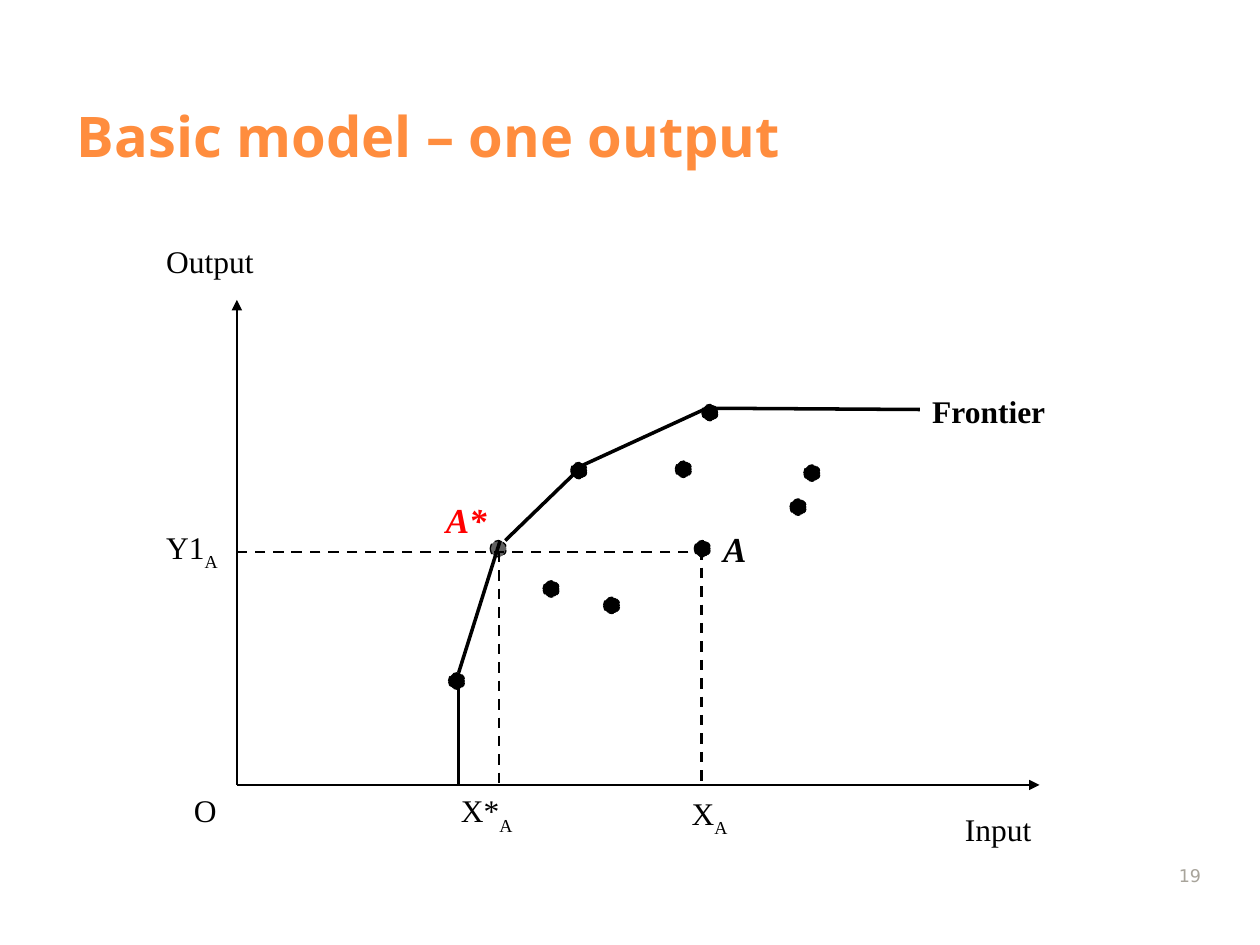
from lxml import etree
from pptx import Presentation
from pptx.dml.color import RGBColor
from pptx.enum.dml import MSO_LINE
from pptx.enum.shapes import MSO_CONNECTOR as CONN, MSO_SHAPE as SHAPE
from pptx.enum.text import MSO_ANCHOR as ANCHOR, PP_ALIGN as ALIGN
from pptx.oxml.ns import qn
from pptx.util import Inches, Pt

BLACK = "000000"
SERIF = "Times New Roman"
DOT = 0.13

# Axes
ORIGIN = (1.88, 6.23)
AXIS_ENDS = [(8.25, 6.23), (1.88, 2.38)]

# Frontier segments, left to right
FRONTIER = [
    ((3.64, 6.23), (3.64, 5.34)),
    ((3.64, 5.34), (3.97, 4.29)),
    ((4.01, 4.29), (4.63, 3.69)),
    ((4.63, 3.69), (5.61, 3.24)),
    ((5.61, 3.24), (7.3, 3.25)),
]

# Dashed guides from A and A* to the axes
GUIDES = [
    ((5.57, 4.36), (5.57, 6.23)),
    ((5.61, 4.38), (1.88, 4.38)),
    ((3.96, 4.38), (3.96, 6.25)),
]

# Top left corners of the observed units
UNITS = [(3.56, 5.34), (4.53, 3.67), (5.57, 3.21), (4.79, 4.74), (5.51, 4.29),
         (6.38, 3.69), (5.36, 3.66), (6.27, 3.96), (4.31, 4.61)]
TARGET = (3.89, 4.29)

# Plain labels: text, box, bold
LABELS = [
    ("Input", (7.56, 6.38, 1.02, 0.45), False),
    ("Output", (1.22, 1.87, 1.12, 0.52), False),
    ("O", (1.44, 6.23, 0.55, 0.45), False),
    ("Frontier", (7.3, 3.06, 1.18, 0.45), True),
]

# Labels with a subscript A: text, box
VALUE_LABELS = [
    ("Y1", (1.22, 4.14, 0.77, 0.6)),
    ("X", (5.39, 6.25, 0.82, 0.45)),
    ("X*", (3.56, 6.23, 0.87, 0.45)),
]

# Point labels: text, box, colour
POINT_LABELS = [
    ("A", (5.64, 4.14, 0.44, 0.45), BLACK),
    ("A*", (3.44, 3.91, 0.64, 0.45), "FF0000"),
]


def rgb(color):
    return RGBColor.from_string(color)


def inches(values):
    return [Inches(v) for v in values]


def style_run(r, size, color=BLACK, font=SERIF, bold=False, italic=False):
    f = r.font
    f.name, f.size, f.bold, f.italic = font, Pt(size), bold, italic
    f.color.rgb = rgb(color)


def add_label(s, text, box, size=18, subscript="", **style):
    tf = s.shapes.add_textbox(*inches(box)).text_frame
    tf.word_wrap = True
    p = tf.paragraphs[0]
    p.text = text
    if subscript:
        r = p.add_run()
        r.text = subscript
        r.font._element.set("baseline", "-30000")
    for r in p.runs:
        style_run(r, size, **style)
    return tf


def add_line(s, start, end, width, dashed=False, arrow=False):
    cx = s.shapes.add_connector(CONN.STRAIGHT, *inches(start + end))
    cx.line.color.rgb = rgb(BLACK)
    cx.line.width = Pt(width)
    if dashed:
        cx.line.dash_style = MSO_LINE.DASH
    if arrow:
        ln = cx.line._get_or_add_ln()
        etree.SubElement(ln, qn("a:tailEnd"), type="triangle")
    etree.SubElement(cx._element.spPr, qn("a:effectLst"))


def add_dot(s, corner, opacity=100):
    sp = s.shapes.add_shape(SHAPE.OVAL, *inches(corner + (DOT, DOT)))
    sp.shadow.inherit = False
    sp.fill.solid()
    sp.fill.fore_color.rgb = rgb(BLACK)
    if opacity < 100:
        clr = sp._element.spPr.find(qn("a:solidFill"))[0]
        etree.SubElement(clr, qn("a:alpha"), val=str(opacity * 1000))
    sp.line.color.rgb = rgb(BLACK)
    sp.line.width = Pt(0.75)
    sp.line.dash_style = MSO_LINE.DASH


def set_title(s, text):
    title = s.shapes.title
    title.left, title.top, title.width, title.height = inches((0.51, 0.52, 8.95, 0.87))
    tf = title.text_frame
    tf.text = text
    tf.vertical_anchor = ANCHOR.BOTTOM
    p = tf.paragraphs[0]
    p.alignment = ALIGN.LEFT
    style_run(p.runs[0], 32, "FF8D3E", "Open Sans", bold=True)


def add_page_number(s, number):
    tf = add_label(s, number, (9.13, 6.68, 0.5, 0.4), 10,
                   color="A8A49B", font="DejaVu Sans")
    tf.vertical_anchor = ANCHOR.BOTTOM
    tf.paragraphs[0].alignment = ALIGN.RIGHT


def main():
    prs = Presentation()
    prs.slide_width, prs.slide_height = inches((10, 7.5))
    s = prs.slides.add_slide(prs.slide_layouts[5])
    set_title(s, "Basic model – one output")

    # Axes, frontier and guides
    for end in AXIS_ENDS:
        add_line(s, ORIGIN, end, 1.5, arrow=True)
    for start, end in FRONTIER:
        add_line(s, start, end, 2)
    for start, end in GUIDES:
        add_line(s, start, end, 1.5, dashed=True)

    # Units and the efficient target
    for corner in UNITS:
        add_dot(s, corner)
    add_dot(s, TARGET, opacity=62)

    # Labels
    for text, box, bold in LABELS:
        add_label(s, text, box, bold=bold)
    for text, box in VALUE_LABELS:
        add_label(s, text, box, subscript="A")
    for text, box, color in POINT_LABELS:
        add_label(s, text, box, 20, color=color, bold=True, italic=True)
    add_page_number(s, "19")

    prs.save("out.pptx")


if __name__ == "__main__":
    main()
